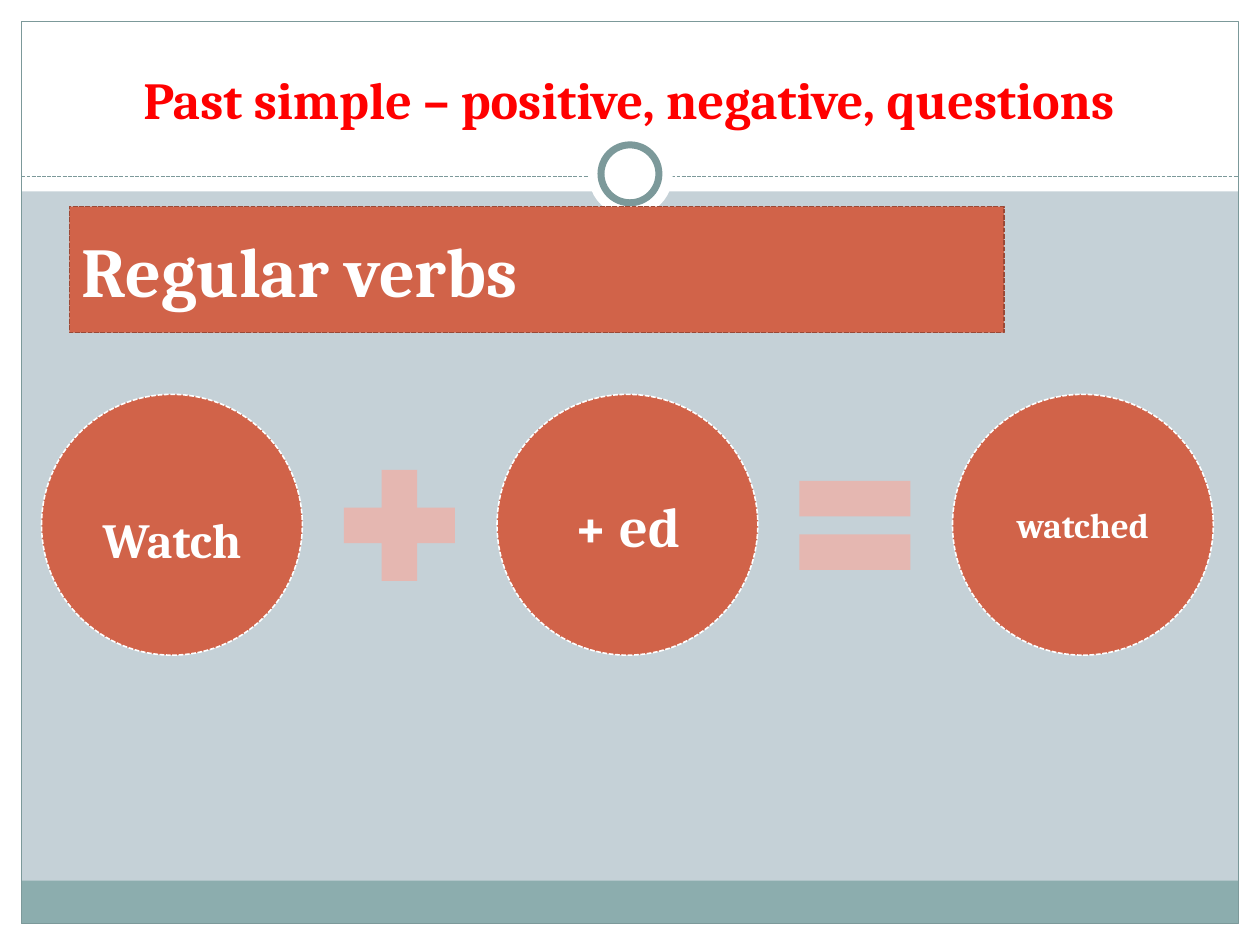
import pptx
import pptx.dml.color
import pptx.enum.dml
import pptx.enum.shapes
import pptx.enum.text
import pptx.oxml.ns
import pptx.util
import lxml.etree

Inches = pptx.util.Inches
Pt = pptx.util.Pt
RGBColor = pptx.dml.color.RGBColor
SHAPE = pptx.enum.shapes.MSO_SHAPE
ANCHOR = pptx.enum.text.MSO_ANCHOR
ALIGN = pptx.enum.text.PP_ALIGN
DASH = pptx.enum.dml.MSO_LINE.SQUARE_DOT

BACKGROUND = RGBColor(0xC5, 0xD1, 0xD7)
WHITE = RGBColor(0xFF, 0xFF, 0xFF)
TEAL = RGBColor(0x8C, 0xAD, 0xAE)
GREY_TEAL = RGBColor(0x7C, 0x99, 0x9A)
ORANGE = RGBColor(0xD1, 0x63, 0x49)
DARK_ORANGE = RGBColor(0x9B, 0x49, 0x36)
PINK = RGBColor(0xE5, 0xB7, 0xB1)
RED = RGBColor(0xFF, 0x00, 0x00)

deck = pptx.Presentation()
deck.slide_width = Inches(10)
deck.slide_height = Inches(7.5)
page = deck.slides.add_slide(deck.slide_layouts[5])
page.background.fill.solid()
page.background.fill.fore_color.rgb = BACKGROUND


def add_block(kind, place, fill=None, line=None, width=0.9, dash=None):
    block = page.shapes.add_shape(kind, *[Inches(length) for length in place])
    block.shadow.inherit = False
    if fill is None:
        block.fill.background()
    else:
        block.fill.solid()
        block.fill.fore_color.rgb = fill
    if line is None:
        block.line.fill.background()
    else:
        block.line.color.rgb = line
        block.line.width = Pt(width)
        block.line.dash_style = dash
    return block


def write(shape, text, size, color, align, anchor):
    frame = shape.text_frame
    frame.text = text
    frame.word_wrap = True
    frame.vertical_anchor = anchor
    para = frame.paragraphs[0]
    para.alignment = align
    font = para.runs[0].font
    font.name = "Cambria"
    font.size = Pt(size)
    font.bold = True
    font.color.rgb = color


for place, color in [
    ((0, 7.33, 10, 0.17), WHITE),
    ((0, 0, 10, 1.52), WHITE),
    ((0, 0, 0.17, 7.5), WHITE),
    ((9.83, 0, 0.17, 7.5), WHITE),
    ((0.17, 6.99, 9.66, 0.34), TEAL),
]:
    add_block(SHAPE.RECTANGLE, place, color)
add_block(SHAPE.RECTANGLE, (0.17, 0.17, 9.66, 7.16), None, GREY_TEAL, 0.75)

divider = page.shapes.add_connector(
    pptx.enum.shapes.MSO_CONNECTOR.STRAIGHT,
    Inches(0.17), Inches(1.4), Inches(9.83), Inches(1.4))
divider.line.color.rgb = GREY_TEAL
divider.line.width = Pt(0.75)
divider.line.dash_style = DASH
lxml.etree.SubElement(divider.element.spPr, pptx.oxml.ns.qn("a:effectLst"))

add_block(SHAPE.OVAL, (4.67, 1.05, 0.67, 0.67), WHITE)
add_block(SHAPE.OVAL, (4.77, 1.15, 0.46, 0.46), WHITE, GREY_TEAL, 4)

title = page.shapes.title
title.left, title.top = Inches(0.33), Inches(0.25)
title.width, title.height = Inches(9.33), Inches(0.83)
write(title, "Past simple – positive, negative, questions", 29.7, RED,
      ALIGN.CENTER, ANCHOR.BOTTOM)
page.shapes.element.append(title.element)

circle_left, circle_step, circle_size = 0.33, 3.615, 2.07
for index, (word, size, top_inset) in enumerate(
        [("Watch", 28, 0.22), ("+ ed", 32, 0), ("watched", 20, 0)]):
    left = circle_left + index * circle_step
    circle = add_block(SHAPE.OVAL, (left, 3.13, circle_size, circle_size),
                       ORANGE, WHITE, dash=DASH)
    write(circle, word, size, WHITE, ALIGN.CENTER, ANCHOR.MIDDLE)
    frame = circle.text_frame
    frame.margin_left = frame.margin_right = frame.margin_bottom = 0
    frame.margin_top = Inches(top_inset)

for index, sign in enumerate([SHAPE.MATH_PLUS, SHAPE.MATH_EQUAL]):
    add_block(sign, (2.57 + index * circle_step, 3.57, 1.2, 1.2), PINK)

heading = add_block(SHAPE.RECTANGLE, (0.55, 1.64, 7.42, 1),
                    ORANGE, DARK_ORANGE, dash=DASH)
write(heading, "Regular verbs", 40, WHITE, ALIGN.LEFT, ANCHOR.MIDDLE)

deck.save("out.pptx")
